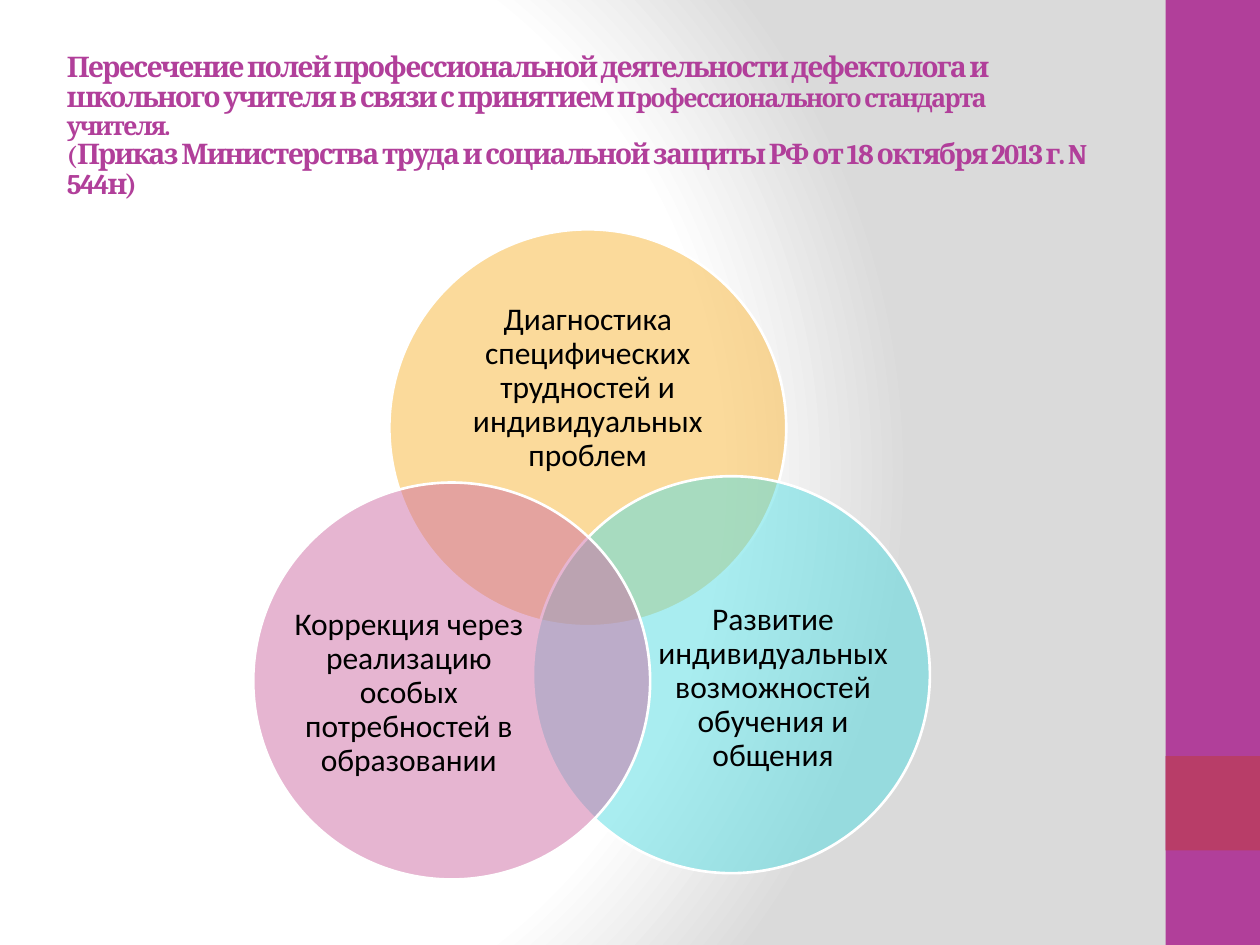
from copy import deepcopy

from lxml import etree
from pptx import Presentation
from pptx.dml.color import RGBColor
from pptx.enum.shapes import MSO_SHAPE
from pptx.enum.text import MSO_ANCHOR, MSO_AUTO_SIZE, PP_ALIGN
from pptx.oxml.ns import qn
from pptx.util import Inches, Pt

RECT, OVAL = MSO_SHAPE.RECTANGLE, MSO_SHAPE.OVAL
MIDDLE, LEFT, CENTER = MSO_ANCHOR.MIDDLE, PP_ALIGN.LEFT, PP_ALIGN.CENTER
NO_FIT = MSO_AUTO_SIZE.NONE

COLORS = {
    "white": "FFFFFF", "gray": "DADADA", "black": "000000",
    "purple": "B13F9A", "crimson": "B83D68",
    "orange": "F9B639", "cyan": "54DDE3", "pink": "CF6DA4",
}

# Title pieces: text, size, whether a line break follows
TITLE = [
    ("Пересечение полей профессиональной деятельности дефектолога и "
     "школьного учителя в связи с принятием п", 16.2, False),
    ("рофессионального стандарта учителя.", 14.4, True),
    ("(", 14.4, False),
    ("Приказ Министерства труда и социальной защиты РФ от 18 октября 2013 г. "
     "N 544н)", 16.2, True),
]

# Circles: text, color, circle position, label box (relative to the diagram)
DIAMETER = 3.15
CIRCLES = [
    ("Диагностика специфических трудностей и индивидуальных проблем",
     "orange", (1.08, 0), (1.5, 0.55, 2.31, 1.42)),
    ("Развитие индивидуальных возможностей обучения и общения",
     "cyan", (2.22, 1.96), (3.18, 2.78, 1.89, 1.73)),
    ("Коррекция через реализацию особых потребностей в образовании",
     "pink", (0, 2.01), (0.29, 2.82, 1.89, 1.73)),
]


def rgb(name):
    return RGBColor.from_string(COLORS[name])


def add_filled(shapes, kind, box, color):
    sp = shapes.add_shape(kind, *map(Inches, box))
    sp.shadow.inherit = False
    sp.fill.solid()
    sp.fill.fore_color.rgb = rgb(color)
    sp.line.fill.background()
    return sp


def set_background(s):
    """Radial gradient from white to gray."""
    fill = s.background.fill
    fill.gradient()
    grad = s.element.find(".//" + qn("a:gradFill"))
    for child in list(grad):
        grad.remove(child)
    stops = etree.SubElement(grad, qn("a:gsLst"))
    for pos, color in ((0, "white"), (75, "white"), (100, "gray")):
        gs = etree.SubElement(stops, qn("a:gs"), pos=str(pos * 1000))
        etree.SubElement(gs, qn("a:srgbClr"), val=COLORS[color])
    circle = etree.SubElement(grad, qn("a:path"), path="circle")
    etree.SubElement(circle, qn("a:fillToRect"),
                     l="20000", t="50000", r="100000", b="50000")


def add_side_bar(s, left, top, width, height):
    add_filled(s.shapes, RECT, (left, top, width, height), "purple")
    add_filled(s.shapes, RECT, (left, top + 6, width, width), "crimson")


def add_title(s, left, top, width, height):
    title = s.shapes.title
    title.left, title.top = Inches(left), Inches(top)
    title.width, title.height = Inches(width), Inches(height)
    tf = title.text_frame
    tf.word_wrap = True
    tf.auto_size = NO_FIT
    tf.vertical_anchor = MIDDLE
    p = tf.paragraphs[0]
    p.alignment = LEFT
    p.line_spacing = 0.88
    for text, size, has_break in TITLE:
        r = p.add_run()
        r.text = text
        r.font.size = Pt(size)
        r.font.name = "Cambria"
        r.font.bold = True
        r.font.color.rgb = rgb("purple")
        props = r.font._element
        props.set("spc", "-100")
        if has_break:
            p.add_line_break()
            p._p.findall(qn("a:br"))[-1].append(deepcopy(props))
    # The empty last line keeps the size of the text above it
    end = deepcopy(props)
    end.tag = qn("a:endParaRPr")
    p._p.append(end)


def add_label(shapes, text, box):
    tf = shapes.add_textbox(*map(Inches, box)).text_frame
    tf.word_wrap = True
    tf.vertical_anchor = MIDDLE
    tf.margin_left = tf.margin_right = tf.margin_top = tf.margin_bottom = 0
    tf.text = text
    p = tf.paragraphs[0]
    p.alignment = CENTER
    p.line_spacing = 0.9
    font = p.runs[0].font
    font.size = Pt(18)
    font.name = "Calibri"
    font.color.rgb = rgb("black")


def add_venn(s, left, top):
    """Three half-transparent overlapping circles with labels."""
    group = s.shapes.add_group_shape()
    for text, color, (x, y), (tx, ty, tw, th) in CIRCLES:
        box = (left + x, top + y, DIAMETER, DIAMETER)
        sp = add_filled(group.shapes, OVAL, box, color)
        clr = sp._element.spPr.find(qn("a:solidFill")).find(qn("a:srgbClr"))
        etree.SubElement(clr, qn("a:alpha"), val="50000")
        sp.line.color.rgb = rgb("white")
        sp.line.width = Pt(1.5)
        add_label(group.shapes, text, (left + tx, top + ty, tw, th))


def main():
    prs = Presentation()
    prs.slide_width, prs.slide_height = Inches(10), Inches(7.5)
    s = prs.slides.add_slide(prs.slide_layouts[5])
    set_background(s)
    add_side_bar(s, 9.25, 0, 0.75, 7.5)
    add_title(s, 0.43, 0.52, 8.33, 1.25)
    add_venn(s, 2.01, 1.82)
    prs.save("out.pptx")


if __name__ == "__main__":
    main()
